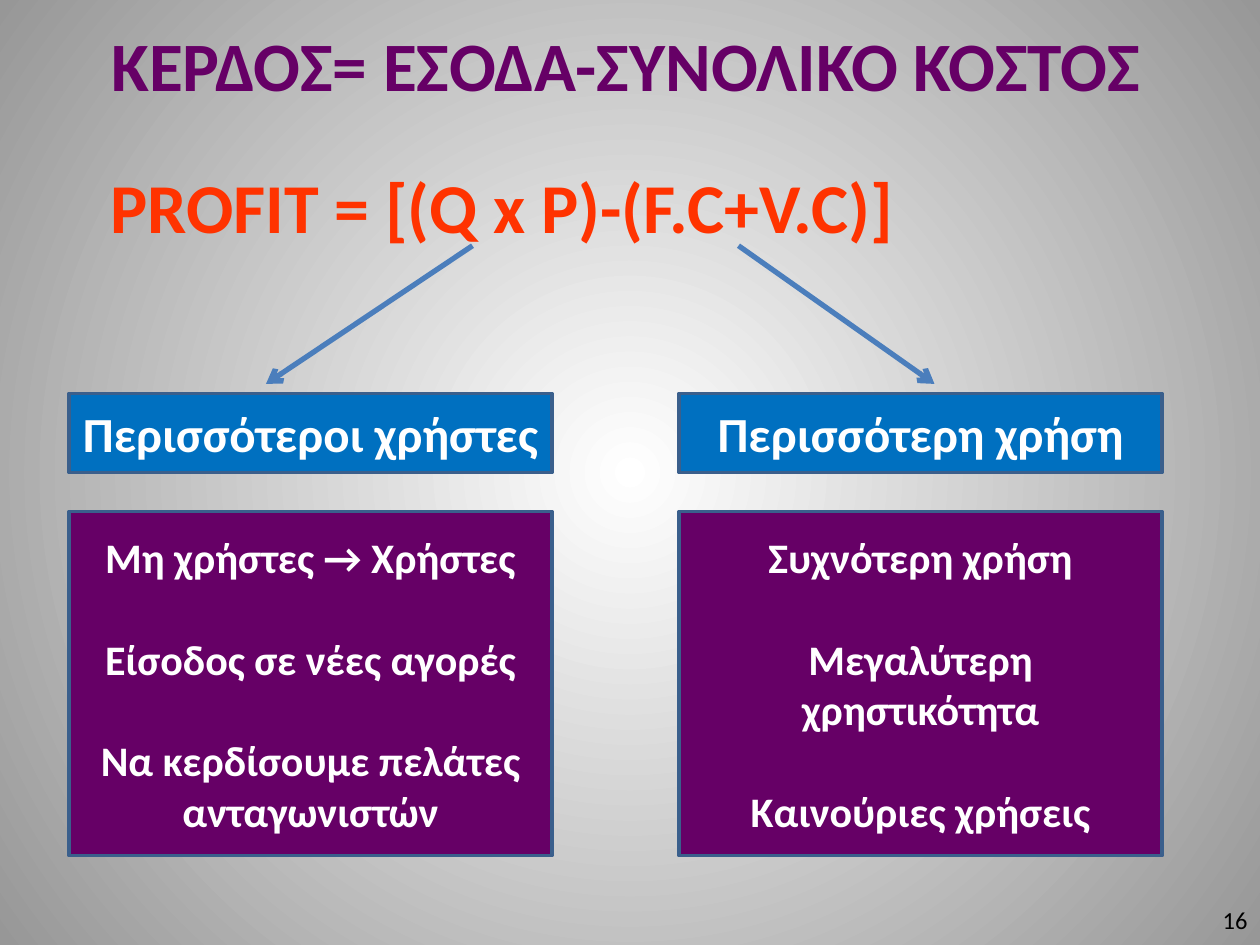
from dataclasses import dataclass

from pptx import Presentation
from pptx.dml.color import RGBColor
from pptx.enum.shapes import MSO_CONNECTOR as Connector, MSO_SHAPE as Shape
from pptx.enum.text import MSO_ANCHOR as Anchor, PP_ALIGN as Align
from pptx.oxml.ns import qn
from pptx.slide import Slide
from pptx.util import Pt
from lxml.etree import SubElement

COLORS = {
    "white": "FFFFFF",
    "gray": "979797",
    "black": "000000",
    "purple": "660066",
    "orange": "FF3300",
    "blue": "0070C0",
    "border": "3A5F8C",
    "arrow": "4B7EBC",
}


def color(name):
    return RGBColor.from_string(COLORS[name])


@dataclass
class SlideBuilder:
    slide: Slide
    font: str = "Calibri"
    border_width: float = 2
    arrow_width: float = 3

    def background(self, inner, outer):
        fill = self.slide.background.fill
        fill.gradient()
        for stop, name, position in zip(fill.gradient_stops, (inner, outer), (0, 1)):
            stop.color.rgb = color(name)
            stop.position = position
        gradient = self.slide.element.xpath(".//a:gradFill")[0]
        for linear in gradient.findall(qn("a:lin")):
            gradient.remove(linear)
        circle = SubElement(gradient, qn("a:path"), {"path": "circle"})
        sides = {side: "50000" for side in "ltrb"}
        SubElement(circle, qn("a:fillToRect"), sides)

    def fill_text(self, shape, lines, size, ink, bold, align, anchor, gap=0):
        text_frame = shape.text_frame
        text_frame.word_wrap = True
        text_frame.vertical_anchor = anchor
        text_frame.text = "\n".join(lines)
        for index, paragraph in enumerate(text_frame.paragraphs):
            paragraph.alignment = align
            paragraph.space_before = Pt(gap if index else 0)
            for run in paragraph.runs:
                run.font.name = self.font
                run.font.size = Pt(size)
                run.font.bold = bold
                run.font.color.rgb = color(ink)

    def text(self, frame, line, size, ink, bold=True, align=Align.LEFT, anchor=Anchor.MIDDLE):
        shape = self.slide.shapes.add_textbox(*map(Pt, frame))
        self.fill_text(shape, [line], size, ink, bold, align, anchor)

    def box(self, frame, lines, size, fill, gap=0):
        shape = self.slide.shapes.add_shape(Shape.RECTANGLE, *map(Pt, frame))
        shape.shadow.inherit = False
        shape.fill.solid()
        shape.fill.fore_color.rgb = color(fill)
        shape.line.color.rgb = color("border")
        shape.line.width = Pt(self.border_width)
        self.fill_text(shape, lines, size, "white", True, Align.CENTER, Anchor.MIDDLE, gap)

    def arrow(self, start, end):
        connector = self.slide.shapes.add_connector(
            Connector.STRAIGHT, *map(Pt, (*start, *end))
        )
        connector.line.color.rgb = color("arrow")
        connector.line.width = Pt(self.arrow_width)
        properties = connector.element.spPr
        SubElement(properties.find(qn("a:ln")), qn("a:tailEnd"), {"type": "arrow"})
        SubElement(properties, qn("a:effectLst"))


def main():
    presentation = Presentation()
    presentation.slide_width = Pt(720)
    presentation.slide_height = Pt(540)
    builder = SlideBuilder(presentation.slides.add_slide(presentation.slide_layouts[6]))

    builder.background("white", "gray")
    builder.text(
        (33.8, 0, 648, 73.4), "ΚΕΡΔΟΣ= ΕΣΟΔΑ-ΣΥΝΟΛΙΚΟ ΚΟΣΤΟΣ", 39.6, "purple", align=Align.CENTER
    )
    builder.text((552, 511, 168, 29), "16", 14, "black", bold=False, align=Align.RIGHT)
    builder.text(
        (56, 90, 598, 55.4), "PROFIT = [(Q x P)-(F.C+V.C)]", 40, "orange", anchor=Anchor.TOP
    )

    columns = [
        (39.4, "Περισσότεροι χρήστες",
         ["Μη χρήστες → Χρήστες", "Είσοδος σε νέες αγορές", "Να κερδίσουμε πελάτες ανταγωνιστών"],
         270, 152),
        (388, "Περισσότερη χρήση",
         ["Συχνότερη χρήση", "Μεγαλύτερη χρηστικότητα", "Καινούριες χρήσεις"],
         422, 534),
    ]
    for left, heading, ways, arrow_start, arrow_end in columns:
        builder.box((left, 292.4, 276, 196.6), ways, 24, "purple", gap=29.3)
        builder.box((left, 224.8, 276, 45.2), [heading], 28, "blue")
        builder.arrow((arrow_start, 140.4), (arrow_end, 219.4))

    presentation.save("out.pptx")


if __name__ == "__main__":
    main()
